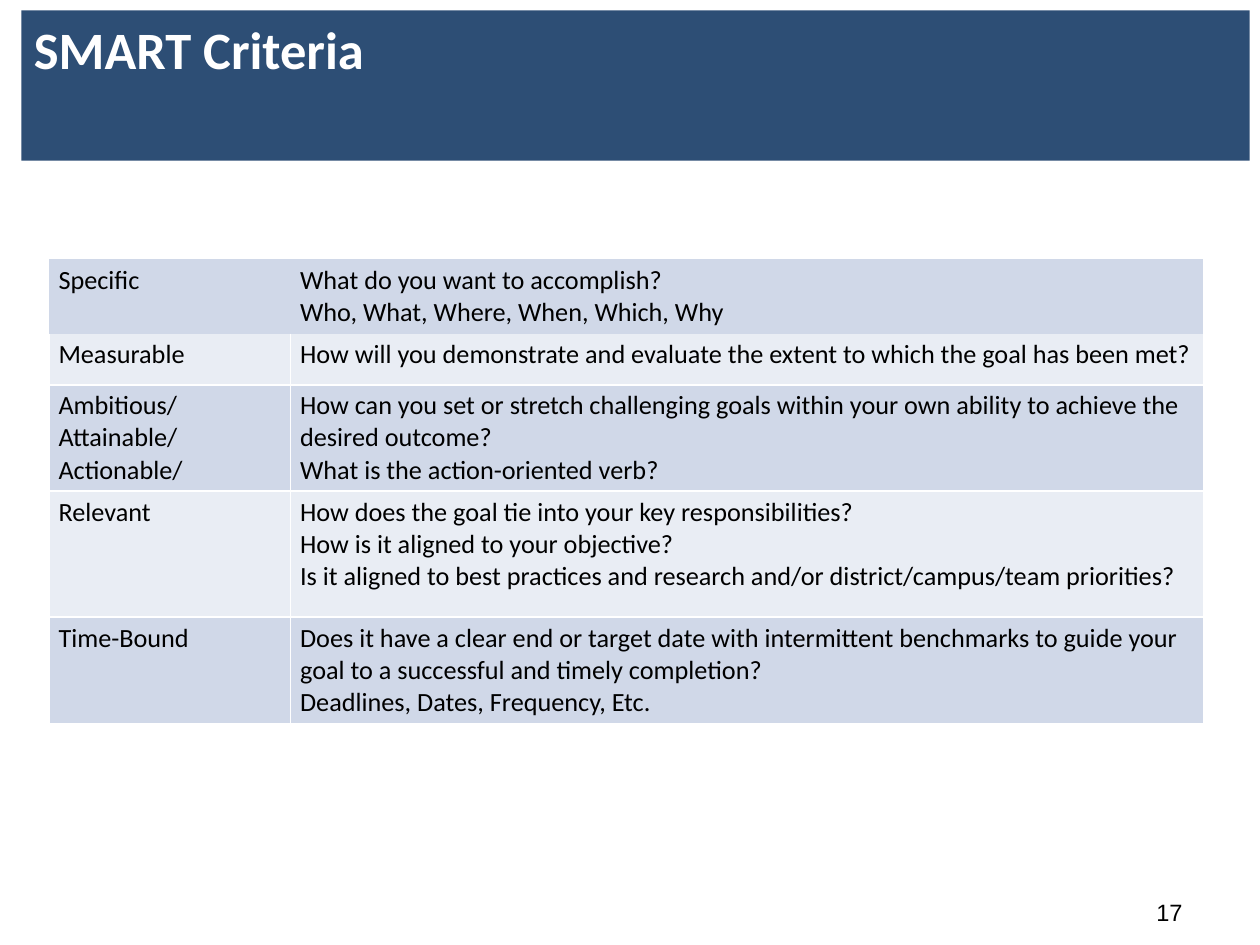
"""Build the SMART Criteria slide with its table of goal questions."""
from lxml.etree import SubElement
from pptx import Presentation
from pptx.dml.color import RGBColor as Rgb
from pptx.enum.text import MSO_ANCHOR as Anchor, MSO_AUTO_SIZE as AutoSize, PP_ALIGN as Align
from pptx.oxml.ns import qn
from pptx.util import Cm, Pt


def color(value):
    """Turn a hex string into a colour."""
    return Rgb.from_string(value)


def add_text(para, text, size, font, shade, bold=False):
    """Add text to a paragraph, with a line break at each newline."""
    for number, line in enumerate(text.split("\n")):
        if number:
            para.add_line_break()
        run = para.add_run()
        run.text = line
        run.font.size = Pt(size)
        run.font.name = font
        run.font.bold = bold
        run.font.color.rgb = color(shade)


CRITERIA = [
    ("Specific", ["What do you want to accomplish?",
                  "Who, What, Where, When, Which, Why"]),
    ("Measurable", ["How will you demonstrate and evaluate the extent to which the goal has been met?"]),
    ("Ambitious/\nAttainable/\nActionable/", [
        "How can you set or stretch challenging goals within your own ability to achieve the desired outcome?",
        "What is the action-oriented verb?"]),
    ("Relevant", ["How does the goal tie into your key responsibilities?",
                  "How is it aligned to your objective?",
                  "Is it aligned to best practices and research and/or district/campus/team priorities?"]),
    ("Time-Bound", [
        "Does it have a clear end or target date with intermittent benchmarks to guide your goal to a "
        "successful and timely completion?",
        "Deadlines, Dates, Frequency, Etc."]),
]
COLUMN_WIDTHS = [4.87, 18.4]
ROW_HEIGHTS = [1.49, 1.03, 2.13, 2.54, 2.12]
BANDS = ["D0D8E8", "E9EDF4"]

deck = Presentation()
deck.slide_width, deck.slide_height = Cm(25.4), Cm(19.05)
page = deck.slides.add_slide(deck.slide_layouts[5])

title = page.shapes.title
title.left, title.top, title.width, title.height = Cm(0.43), Cm(0.21), Cm(24.76), Cm(3.03)
title.fill.solid()
title.fill.fore_color.rgb = color("2D4E75")
title.text_frame.auto_size = AutoSize.NONE
title.text_frame.vertical_anchor = Anchor.TOP
para = title.text_frame.paragraphs[0]
para.alignment = Align.LEFT
add_text(para, "SMART Criteria", 30, "Calibri", "FFFFFF", True)

frame = page.shapes.add_table(len(CRITERIA), 2, Cm(0.99), Cm(5.23),
                              Cm(sum(COLUMN_WIDTHS)), Cm(sum(ROW_HEIGHTS)))
table = frame.table
table.first_row = False
table.horz_banding = False
for column, width in zip(table.columns, COLUMN_WIDTHS):
    column.width = Cm(width)
for row, height in zip(table.rows, ROW_HEIGHTS):
    row.height = Cm(height)

for row_number, (name, questions) in enumerate(CRITERIA):
    for column_number, lines in enumerate([[name], questions]):
        cell = table.cell(row_number, column_number)
        cell.margin_left = cell.margin_right = Cm(0.19)
        cell.margin_top = cell.margin_bottom = Cm(0.1)
        properties = cell._tc.get_or_add_tcPr()
        for side in ["lnL", "lnR", "lnT", "lnB"]:
            border = SubElement(properties, qn(f"a:{side}"), w=str(Pt(1)))
            if row_number == 0 or (row_number == 1 and side == "lnT"):
                SubElement(border, qn("a:noFill"))
            else:
                fill = SubElement(border, qn("a:solidFill"))
                SubElement(fill, qn("a:srgbClr"), val="FFFFFF")
        cell.fill.solid()
        cell.fill.fore_color.rgb = color(BANDS[row_number % 2])
        for number, line in enumerate(lines):
            para = cell.text_frame.add_paragraph() if number else cell.text_frame.paragraphs[0]
            add_text(para, line, 15, "Calibri", "000000")

page_number = page.shapes.add_textbox(Cm(23.06), Cm(17.98), Cm(1.09), Cm(0.84))
page_number.text_frame.word_wrap = False
add_text(page_number.text_frame.paragraphs[0], "17", 13.5, "Arial", "000000")

deck.save("out.pptx")
